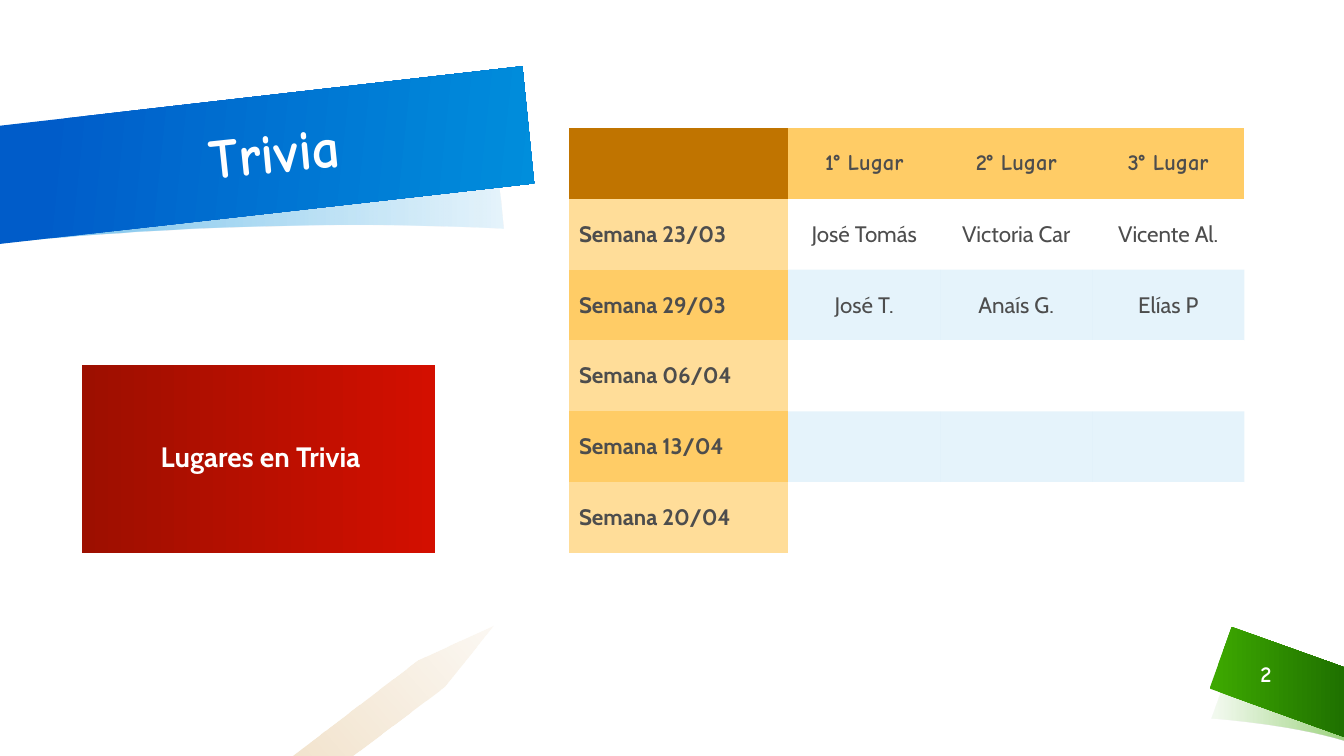
from dataclasses import dataclass

from lxml import etree
from pptx import Presentation
from pptx.dml.color import RGBColor
from pptx.enum.shapes import MSO_SHAPE
from pptx.enum.text import MSO_ANCHOR, PP_ALIGN
from pptx.oxml.ns import qn
from pptx.util import Pt

RECTANGLE = MSO_SHAPE.RECTANGLE
MIDDLE = MSO_ANCHOR.MIDDLE
LEFT, CENTER = PP_ALIGN.LEFT, PP_ALIGN.CENTER
NO_STYLE_TABLE = "{2D5ABB26-0587-4C30-8999-92F81FD0307C}"


@dataclass(frozen=True)
class Theme:
    display: str = "Comic Neue"
    body: str = "Cabin"
    title_size: int = 40
    body_size: int = 20
    small_size: int = 16
    white: str = "FFFFFF"
    text: str = "4D4D4D"
    blue: str = "008EDC"
    deep_blue: str = "005CC9"
    green: str = "3DA800"
    deep_green: str = "1F7100"
    red: str = "D30F00"
    deep_red: str = "9D0F00"
    brown: str = "C07400"
    amber: str = "FFCC66"
    light_amber: str = "FFDD99"


THEME = Theme()
HEADER = ["", "1° Lugar", "2° Lugar", "3° Lugar"]
WEEKS = [
    ["Semana 23/03", "José Tomás", "Victoria Car", "Vicente Al."],
    ["Semana 29/03", "José T.", "Anaís G.", "Elías P"],
    ["Semana 06/04", "", "", ""],
    ["Semana 13/04", "", "", ""],
    ["Semana 20/04", "", "", ""],
]


def set_alpha(color_element, percent):
    alpha = etree.SubElement(color_element, qn("a:alpha"))
    alpha.set("val", str(percent * 1000))


def fill_gradient(sp, stops, angle):
    """Fill from two (position, colour, opacity) stops; the angle runs clockwise."""
    sp.shadow.inherit = False
    sp.line.fill.background()
    sp.fill.gradient()
    sp.fill.gradient_angle = -angle % 360
    for stop, (position, color, _) in zip(sp.fill.gradient_stops, stops):
        stop.position = position / 100
        stop.color.rgb = RGBColor.from_string(color)
    colors = sp._element.spPr.iter(qn("a:srgbClr"))
    for element, (_, _, opacity) in zip(list(colors), stops):
        if opacity < 100:
            set_alpha(element, opacity)


def curve(p0, p1, p2, p3, steps=24):
    """Points along a cubic Bézier curve."""
    points = []
    for i in range(steps + 1):
        t = i / steps
        u = 1 - t
        weights = (u ** 3, 3 * u * u * t, 3 * u * t * t, t ** 3)
        points.append(tuple(
            sum(w * c for w, c in zip(weights, axis))
            for axis in zip(p0, p1, p2, p3)))
    return points


def add_outline(slide, points, stops, angle):
    corners = [(Pt(x), Pt(y)) for x, y in points]
    builder = slide.shapes.build_freeform(*corners[0])
    builder.add_line_segments(corners[1:], close=True)
    fill_gradient(builder.convert_to_shape(), stops, angle)


def write(tf, text, font, size, color, bold=True, align=CENTER):
    tf.text = text
    p = tf.paragraphs[0]
    p.alignment = align
    for r in p.runs:
        r.font.name = font
        r.font.size = Pt(size)
        r.font.bold = bold
        r.font.color.rgb = RGBColor.from_string(color)
    return p


def add_label(slide, box, text, size, rotation=0):
    sp = slide.shapes.add_textbox(*map(Pt, box))
    sp.rotation = rotation
    tf = sp.text_frame
    tf.word_wrap = True
    tf.vertical_anchor = MIDDLE
    write(tf, text, THEME.display, size, THEME.white).line_spacing = 0.9


def add_panel(slide, box, text):
    sp = slide.shapes.add_shape(RECTANGLE, *map(Pt, box))
    fill_gradient(sp, [(0, THEME.red, 100), (100, THEME.deep_red, 100)], 180)
    tf = sp.text_frame
    tf.word_wrap = True
    tf.vertical_anchor = MIDDLE
    tf.margin_left = Pt(11.5)
    tf.margin_right = tf.margin_top = tf.margin_bottom = Pt(8.6)
    write(tf, text, THEME.body, THEME.body_size, THEME.white).line_spacing = 0.9


def fill_cell(cell, color, opacity=100):
    cell.fill.solid()
    cell.fill.fore_color.rgb = RGBColor.from_string(color)
    if opacity < 100:
        set_alpha(next(cell._tc.tcPr.iter(qn("a:srgbClr"))), opacity)


def add_ranking(slide, box):
    rows = [HEADER] + WEEKS
    frame = slide.shapes.add_table(len(rows), len(HEADER), *map(Pt, box))
    table = frame.table
    table.first_row = table.horz_banding = False
    table._tbl.tblPr.find(qn("a:tableStyleId")).text = NO_STYLE_TABLE
    for column, width in zip(table.columns, [156.6] + [108.6] * 3):
        column.width = Pt(width)
    for i, row in enumerate(rows):
        table.rows[i].height = Pt(box[3] / len(rows))
        even = i % 2 == 0
        for j, text in enumerate(row):
            cell = table.cell(i, j)
            cell.vertical_anchor = MIDDLE
            if i == 0:
                fill_cell(cell, THEME.amber if j else THEME.brown)
            elif j == 0:
                fill_cell(cell, THEME.amber if even else THEME.light_amber)
            elif even:
                fill_cell(cell, THEME.blue, 10)
            else:
                fill_cell(cell, THEME.white)
            write(cell.text_frame, text,
                  THEME.body if i else THEME.display, THEME.small_size,
                  THEME.text, bold=i == 0 or j == 0,
                  align=CENTER if j else LEFT)


def add_page_ribbon(slide):
    start, end = (865.4, 513.4), (881.3, 469.4)
    shade = (curve(start, start, (920.2, 517), (960, 529.2))
             + curve((960, 481), (915.8, 468.7), end, end))
    add_outline(slide, shade, [(3, THEME.green, 6), (100, THEME.green, 50)], 0)
    band = [(960, 476.6), (879.8, 447.8), (864, 491.8), (960, 526.3)]
    add_outline(slide, band,
                [(3, THEME.green, 100), (100, THEME.deep_green, 100)], 0)


def add_title_ribbon(slide):
    top, bottom = (350.6, 81.4), (359.3, 163.4)
    shade = (curve(top, top, (225.4, 67.7), (0, 90))
             + curve((0, 173.5), (205.9, 152.6), bottom, bottom))
    add_outline(slide, shade, [(0, THEME.blue, 10), (88, THEME.blue, 50)], 180)
    band = [(0, 174.2), (381.6, 131), (373.2, 47.3), (0, 89.8)]
    add_outline(slide, band,
                [(9, THEME.deep_blue, 100), (100, THEME.blue, 100)], 6)


def add_pencil(slide):
    outline = [(352.8, 446.8), (298.8, 471.6), (209, 540), (252.5, 540),
               (317.5, 491)]
    add_outline(slide, outline,
                [(0, THEME.brown, 5), (100, THEME.brown, 20)], 139)


def main():
    prs = Presentation()
    prs.slide_width, prs.slide_height = Pt(960), Pt(540)
    slide = prs.slides.add_slide(prs.slide_layouts[6])
    add_page_ribbon(slide)
    add_title_ribbon(slide)
    add_pencil(slide)
    add_label(slide, (14.4, 69, 363.6, 83.5), "Trivia", THEME.title_size, -6)
    add_ranking(slide, (406.4, 91.4, 482.4, 303.6))
    add_label(slide, (879, 468, 50.4, 28.8), "2", THEME.small_size)
    add_panel(slide, (58.7, 260.7, 252, 134.2), "Lugares en Trivia")
    prs.save("out.pptx")


if __name__ == "__main__":
    main()
